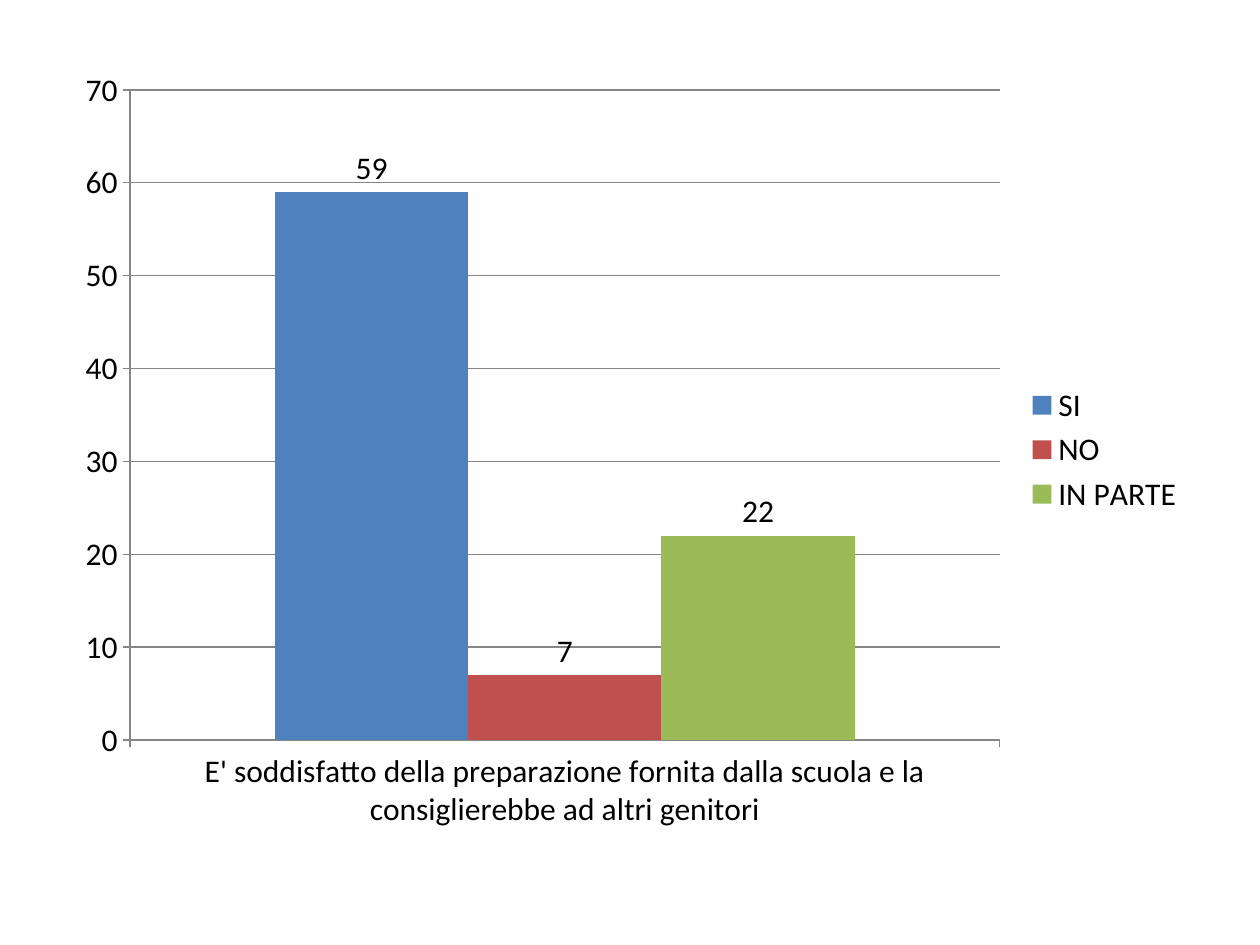
from pptx import Presentation
from pptx.chart.data import CategoryChartData
from pptx.dml.color import RGBColor
from pptx.enum.chart import (
    XL_CHART_TYPE, XL_LABEL_POSITION, XL_LEGEND_POSITION, XL_TICK_MARK,
)
from pptx.util import Pt

# Content
QUESTION = ("E' soddisfatto della preparazione fornita dalla scuola e la "
            "consiglierebbe ad altri genitori")
ANSWERS = [
    ("SI", 59, RGBColor(0x4F, 0x81, 0xBD)),
    ("NO", 7, RGBColor(0xC0, 0x50, 0x4D)),
    ("IN PARTE", 22, RGBColor(0x9B, 0xBB, 0x59)),
]
BLACK = RGBColor(0, 0, 0)
GRAY = RGBColor(0x86, 0x86, 0x86)

# Slide
presentation = Presentation()
presentation.slide_width, presentation.slide_height = Pt(720), Pt(540)
slide = presentation.slides.add_slide(presentation.slide_layouts[6])

# Chart
chart_data = CategoryChartData(number_format="General")
chart_data.categories = [QUESTION]
for name, count, _ in ANSWERS:
    chart_data.add_series(name, [count])
chart = slide.shapes.add_chart(
    XL_CHART_TYPE.COLUMN_CLUSTERED, Pt(36), Pt(31.5), Pt(648), Pt(451), chart_data
).chart
chart.has_title = False
chart.font.name = "Calibri"
chart.font.size = Pt(18)
chart.font.color.rgb = BLACK

# Legend
chart.has_legend = True
chart.legend.position = XL_LEGEND_POSITION.RIGHT
chart.legend.include_in_layout = False

# Axes
value_axis = chart.value_axis
value_axis.minimum_scale, value_axis.maximum_scale = 0, 70
value_axis.major_unit = 10
value_axis.has_major_gridlines = True
value_axis.major_gridlines.format.line.color.rgb = GRAY
for axis in (chart.category_axis, value_axis):
    axis.major_tick_mark = XL_TICK_MARK.OUTSIDE
    axis.minor_tick_mark = XL_TICK_MARK.NONE
    axis.format.line.color.rgb = GRAY

# Columns and value labels
plot = chart.plots[0]
plot.gap_width = 150
plot.overlap = 0
plot.vary_by_categories = False
for series, (_, _, color) in zip(plot.series, ANSWERS):
    series.format.fill.solid()
    series.format.fill.fore_color.rgb = color
    series.data_labels.show_value = True
    series.data_labels.position = XL_LABEL_POSITION.OUTSIDE_END

presentation.save("out.pptx")
